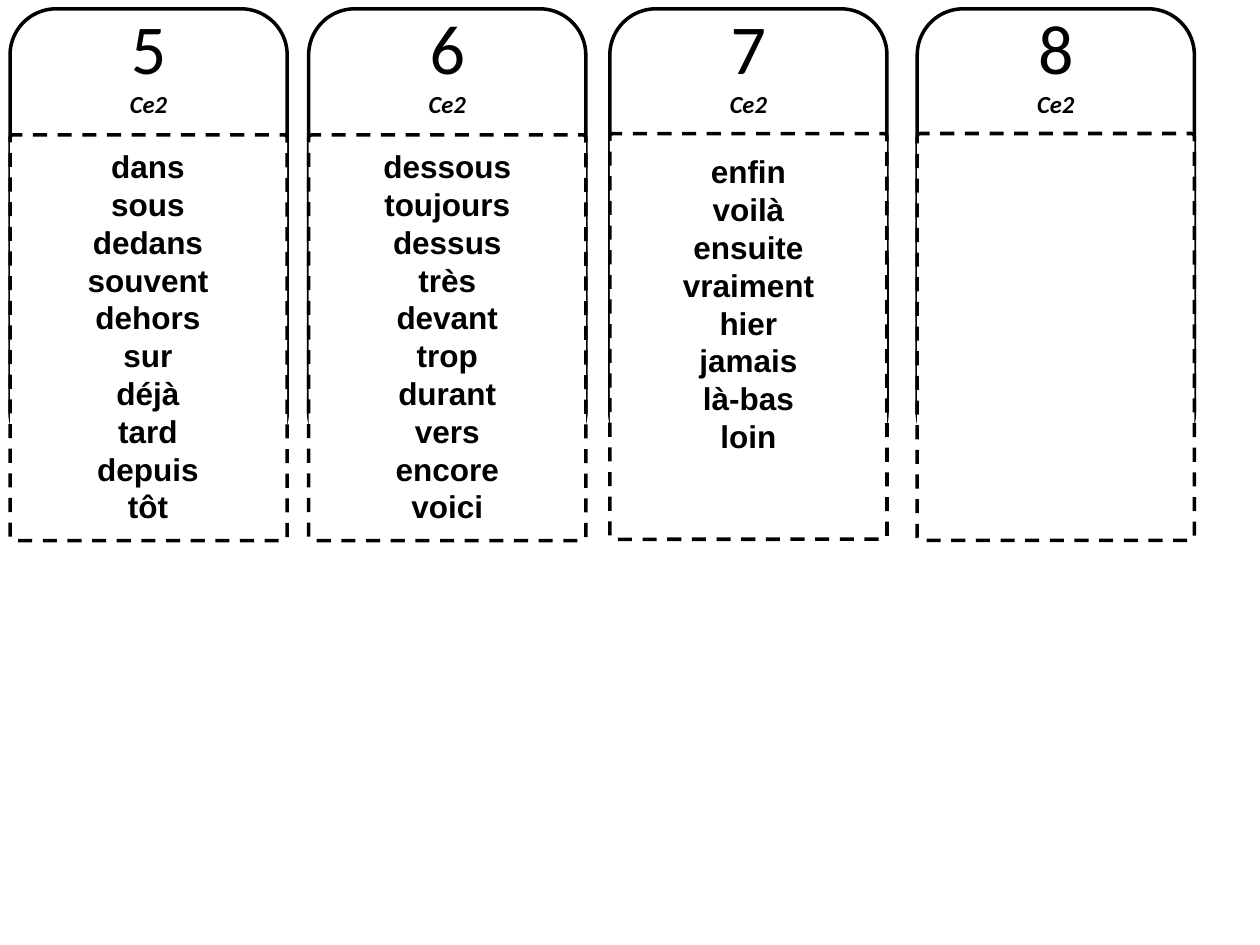
from pptx import Presentation
from pptx.dml.color import RGBColor
from pptx.enum.dml import MSO_LINE_DASH_STYLE as Dash
from pptx.enum.shapes import MSO_SHAPE as Shape
from pptx.enum.text import MSO_ANCHOR as Anchor, MSO_AUTO_SIZE as AutoSize, PP_ALIGN as Align
from pptx.util import Inches, Pt

CARD_WIDTH = 2.2
TAB_HEIGHT = 3.57
BLACK, WHITE = "000000", "FFFFFF"


def color(hex_code):
    """Return the colour for a hex string."""
    return RGBColor.from_string(hex_code)


def style_text(paragraph, text, font_name, size, bold=False, italic=False):
    """Fill a centred paragraph with black text."""
    paragraph.text = text
    paragraph.alignment = Align.CENTER
    font = paragraph.font
    font.name, font.size, font.bold, font.italic = font_name, Pt(size), bold, italic
    font.color.rgb = color(BLACK)


def add_frame(slide, left, top, width, height):
    """Add an unfilled rounded frame with a black outline."""
    frame = slide.shapes.add_shape(
        Shape.ROUNDED_RECTANGLE, Inches(left), Inches(top), Inches(width), Inches(height))
    frame.shadow.inherit = False
    frame.fill.background()
    frame.line.color.rgb = color(BLACK)
    frame.line.width = Pt(2)
    return frame


def add_tab(slide, left, top, number, level):
    """Add the rounded card back, headed by its number and school level."""
    heading = add_frame(slide, left, top, CARD_WIDTH, TAB_HEIGHT).text_frame
    heading.vertical_anchor = Anchor.TOP
    heading.margin_top = 0
    style_text(heading.paragraphs[0], number, "Calibri", 40)
    heading.paragraphs[0].line_spacing = Pt(38)
    style_text(heading.add_paragraph(), level, "Calibri", 14, bold=True, italic=True)


def add_panel(slide, left, top, height):
    """Add the dashed white panel that holds the words."""
    panel = add_frame(slide, left, top, CARD_WIDTH, height)
    panel.adjustments[0] = 0.011
    panel.fill.solid()
    panel.fill.fore_color.rgb = color(WHITE)
    panel.line.dash_style = Dash.DASH


def add_words(slide, left, top, width, height, words):
    """Add a centred column of words, one per paragraph."""
    column = slide.shapes.add_textbox(
        Inches(left), Inches(top), Inches(width), Inches(height)).text_frame
    column.word_wrap = True
    column.auto_size = AutoSize.SHAPE_TO_FIT_TEXT
    for index, word in enumerate(words):
        paragraph = column.add_paragraph() if index else column.paragraphs[0]
        style_text(paragraph, word, "Arial", 18, bold=True)


def add_card(slide, left, top, number, panel_offset, panel_height, words, words_box):
    """Add one word card at the given corner."""
    add_tab(slide, left, top, number, "Ce2")
    add_panel(slide, left, top + panel_offset, panel_height)
    if words:
        dx, dy, width, height = words_box
        add_words(slide, left + dx, top + dy, width, height, words.split())


def main():
    """Build the slide of word cards."""
    deck = Presentation()
    deck.slide_width, deck.slide_height = Inches(10), Inches(7.5)
    slide = deck.slides.add_slide(deck.slide_layouts[6])
    cards = [
        (0.08, "5", 1, 3.22,
         "dans sous dedans souvent dehors sur déjà tard depuis tôt", (0.28, 1.05, 1.63, 3.13)),
        (2.45, "6", 1, 3.22,
         "dessous toujours dessus très devant trop durant vers encore voici",
         (0.31, 1.05, 1.58, 3.13)),
        (4.84, "7", 0.99, 3.22,
         "enfin voilà ensuite vraiment hier jamais là-bas loin", (0.35, 1.09, 1.5, 2.52)),
        (7.28, "8", 0.99, 3.23, "", None),
    ]
    for left, *details in cards:
        add_card(slide, left, 0.07, *details)
    deck.save("out.pptx")


if __name__ == "__main__":
    main()
